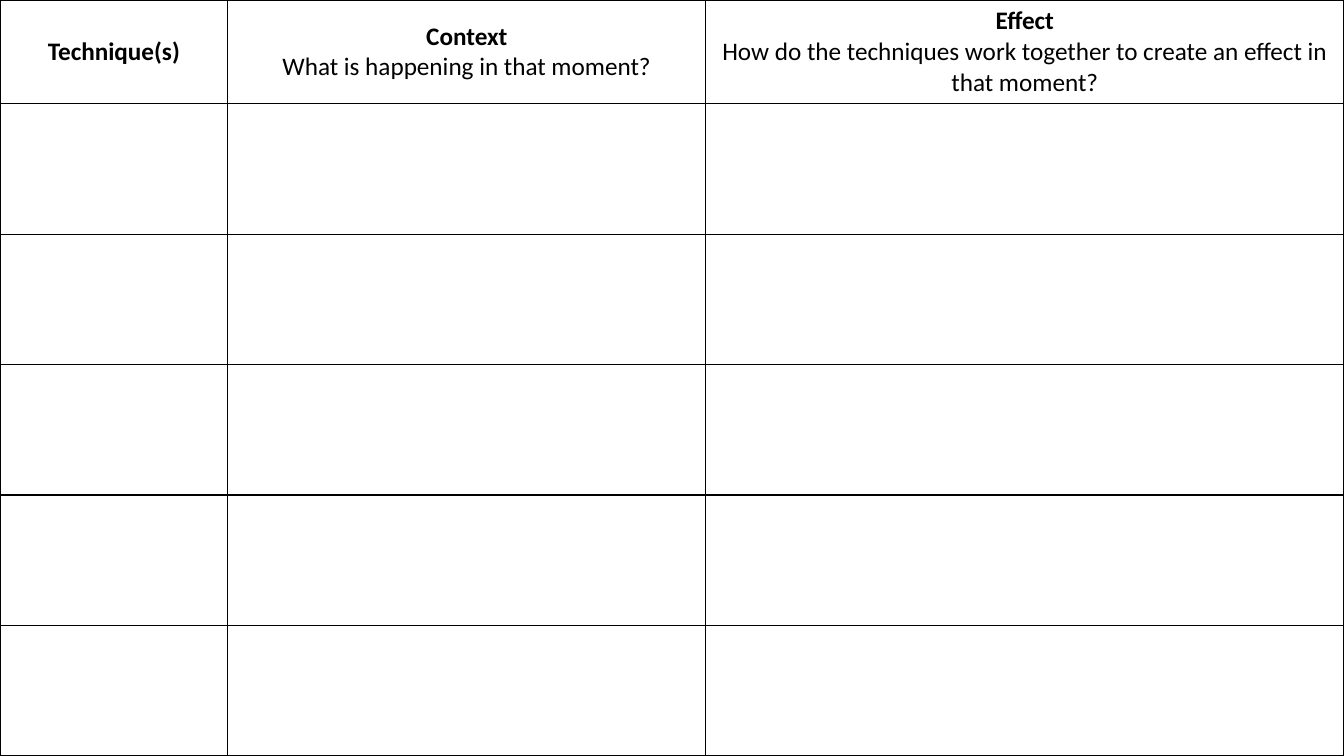
import dataclasses

import lxml.etree
import pptx
import pptx.dml.color
import pptx.enum.text
import pptx.oxml.ns
import pptx.table
import pptx.util

BLACK = pptx.dml.color.RGBColor(0x00, 0x00, 0x00)
WHITE = pptx.dml.color.RGBColor(0xFF, 0xFF, 0xFF)
SLIDE_WIDTH, SLIDE_HEIGHT = 13.33, 7.5
HEADER_HEIGHT = 1.03
ANSWER_ROWS = 5


@dataclasses.dataclass
class Column:
    width: float
    heading: str
    question: str = ""


COLUMNS = [
    Column(2.26, "Technique(s)"),
    Column(4.74, "Context", "What is happening in that moment?"),
    Column(6.33, "Effect", "How do the techniques work together to create an effect in that moment?"),
]


def style_cell(cell: pptx.table._Cell) -> None:
    properties = cell._tc.get_or_add_tcPr()
    for side in ("lnL", "lnR", "lnT", "lnB"):
        border = lxml.etree.SubElement(
            properties, pptx.oxml.ns.qn(f"a:{side}"), w=str(pptx.util.Pt(1))
        )
        border_fill = lxml.etree.SubElement(border, pptx.oxml.ns.qn("a:solidFill"))
        lxml.etree.SubElement(border_fill, pptx.oxml.ns.qn("a:srgbClr"), val=str(BLACK))
    cell.fill.solid()
    cell.fill.fore_color.rgb = WHITE


def write_heading(cell: pptx.table._Cell, column: Column) -> None:
    cell.vertical_anchor = pptx.enum.text.MSO_ANCHOR.MIDDLE
    cell.text_frame.text = "\n".join(filter(None, (column.heading, column.question)))
    for index, paragraph in enumerate(cell.text_frame.paragraphs):
        paragraph.alignment = pptx.enum.text.PP_ALIGN.CENTER
        font = paragraph.runs[0].font
        font.name = "Calibri"
        font.size = pptx.util.Pt(18)
        font.bold = index == 0
        font.color.rgb = BLACK


def main() -> None:
    presentation = pptx.Presentation()
    presentation.slide_width = pptx.util.Inches(SLIDE_WIDTH)
    presentation.slide_height = pptx.util.Inches(SLIDE_HEIGHT)
    slide = presentation.slides.add_slide(presentation.slide_layouts[6])

    worksheet = slide.shapes.add_table(
        ANSWER_ROWS + 1, len(COLUMNS), 0, 0, presentation.slide_width, presentation.slide_height
    ).table
    worksheet.first_row = False
    worksheet.horz_banding = False

    answer_height = (SLIDE_HEIGHT - HEADER_HEIGHT) / ANSWER_ROWS
    for index, row in enumerate(worksheet.rows):
        row.height = pptx.util.Inches(answer_height if index else HEADER_HEIGHT)
    for cell in worksheet.iter_cells():
        style_cell(cell)
    for index, column in enumerate(COLUMNS):
        worksheet.columns[index].width = pptx.util.Inches(column.width)
        write_heading(worksheet.cell(0, index), column)

    presentation.save("out.pptx")


if __name__ == "__main__":
    main()
